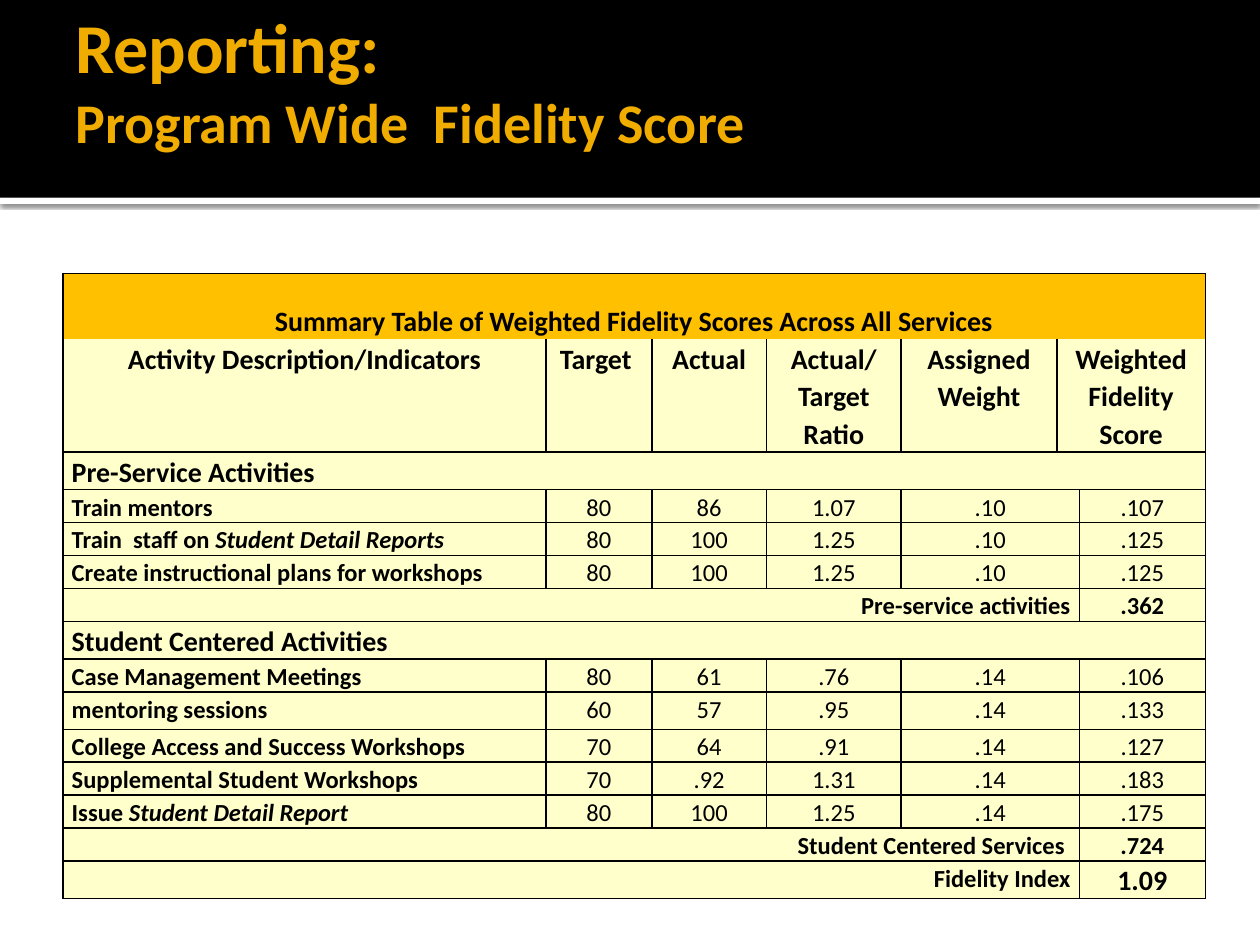
from lxml import etree
from pptx import Presentation
from pptx.dml.color import RGBColor
from pptx.enum.shapes import MSO_SHAPE
from pptx.enum.text import MSO_ANCHOR, PP_ALIGN
from pptx.util import Pt

RECT = MSO_SHAPE.RECTANGLE
MIDDLE = MSO_ANCHOR.MIDDLE
LEFT, CENTER, RIGHT, JUST = PP_ALIGN.LEFT, PP_ALIGN.CENTER, PP_ALIGN.RIGHT, PP_ALIGN.JUSTIFY
NS = "http://schemas.openxmlformats.org/drawingml/2006/main"
THEME = {
    "font": "Calibri", "black": "000000", "white": "FFFFFF", "gold": "F0AD00",
    "amber": "FFC000", "cream": "FFFFCC", "title": 40, "sub": 32, "head": 16, "body": 14,
}


def write(par, text, size, color="black", bold=True, align=LEFT):
    par.alignment = align
    for i, part in enumerate(text.split("*")):
        run = par.add_run()
        run.text = part
        look = {"name": THEME["font"], "size": Pt(size), "bold": bold, "italic": i % 2 == 1}
        for key, val in look.items():
            setattr(run.font, key, val)
        run.font.color.rgb = RGBColor.from_string(THEME[color])


def put(row, col, text, size, bold, align, span=1, fill="cream", sides="LRTB", top=0):
    cell = table.cell(row, col)
    if span > 1:
        cell.merge(table.cell(row, col + span - 1))
    margins = {"margin_left": Pt(5), "margin_right": Pt(5), "margin_top": Pt(top), "margin_bottom": 0}
    for key, val in margins.items():
        setattr(cell, key, val)
    cell.fill.solid()
    cell.fill.fore_color.rgb = RGBColor.from_string(THEME[fill])
    for i, line in enumerate(text.split("\n")):
        par = cell.text_frame.add_paragraph() if i else cell.text_frame.paragraphs[0]
        par.line_spacing = 1.1
        write(par, line, size, "black", bold, align)
    props = cell._tc.get_or_add_tcPr()
    for i, side in enumerate("LRTB"):
        paint = f'<a:solidFill><a:srgbClr val="{THEME["black"]}"/></a:solidFill>'
        if side not in sides:
            paint = "<a:noFill/>"
        props.insert(i, etree.fromstring(f'<a:ln{side} xmlns:a="{NS}" w="{Pt(1)}">{paint}</a:ln{side}>'))


prs = Presentation()
prs.slide_width, prs.slide_height = Pt(720), Pt(540)
slide = prs.slides.add_slide(prs.slide_layouts[6])

for name, top, high in (("white", 113, 3.6), ("black", 0, 113)):
    band = slide.shapes.add_shape(RECT, 0, Pt(top), Pt(720), Pt(high))
    band.shadow.inherit = False
    band.fill.solid()
    band.fill.fore_color.rgb = RGBColor.from_string(THEME[name])
    band.line.fill.background()
    if name == "white":
        shade = etree.fromstring(
            f'<a:outerShdw xmlns:a="{NS}" blurRad="{Pt(2.5)}" dist="{Pt(0.8)}" dir="5400000">'
            f'<a:srgbClr val="{THEME["black"]}"><a:alpha val="60000"/></a:srgbClr></a:outerShdw>')
        band._element.spPr.find(f"{{{NS}}}effectLst").append(shade)

DATA = [
    ("title", "Summary Table of Weighted Fidelity Scores Across All Services"),
    ("head", "Activity Description/Indicators", "Target ", "Actual", "Actual/\nTarget Ratio",
     "Assigned Weight", "Weighted Fidelity Score"),
    ("part", "Pre-Service Activities"),
    ("item", "Train mentors", "80", "86", "1.07", ".10", ".107"),
    ("item", "Train  staff on *Student Detail Reports", "80", "100", "1.25", ".10", ".125"),
    ("item", "Create instructional plans for workshops", "80", "100", "1.25", ".10", ".125"),
    ("sum", "Pre-service activities", ".362"),
    ("part", "Student Centered Activities"),
    ("item", "Case Management Meetings", "80", "61", ".76", ".14", ".106"),
    ("item", "mentoring sessions", "60", "57", ".95", ".14", ".133"),
    ("item", "College Access and Success Workshops", "70", "64", ".91", ".14", ".127"),
    ("item", "Supplemental Student Workshops", "70", ".92", "1.31", ".14", ".183"),
    ("item", "Issue *Student Detail Report", "80", "100", "1.25", ".14", ".175"),
    ("sum", "Student Centered Services ", ".724"),
    ("sum", "Fidelity Index", "1.09"),
]
WIDE = [276, 60.5, 65.5, 77, 89, 7.2, 72]
HIGH = {"title": 37.5, "head": 64.5, "part": 21.4, "item": 18.8, "sum": 18.8}

frame = slide.shapes.add_table(len(DATA), len(WIDE), Pt(36), Pt(156.2), Pt(648), Pt(352))
table = frame.table
table.first_row = table.horz_banding = False
for col, wide in zip(table.columns, WIDE):
    col.width = Pt(wide)

HEAD, BODY = THEME["head"], THEME["body"]
for row, (kind, *vals) in enumerate(DATA):
    table.rows[row].height = Pt(HIGH[kind])
    if kind == "title":
        put(row, 0, vals[0], HEAD, True, CENTER, 7, "amber", "LRT", 16)
    elif kind == "part":
        put(row, 0, vals[0], HEAD, True, JUST, 7)
    elif kind == "sum":
        last = row == len(DATA) - 1
        put(row, 0, vals[0], BODY, True, RIGHT, 6)
        put(row, 6, vals[1], HEAD if last else BODY, True, CENTER)
    elif kind == "head":
        for col, val in enumerate(vals):
            put(row, col, val, HEAD, True, CENTER, 2 if col == 5 else 1, sides="LRB")
    else:
        for col, val in enumerate(vals):
            put(row, col + (col == 5), val, BODY, col == 0, CENTER if col else JUST, 2 if col == 4 else 1)
table.rows[9].height = Pt(21.4)

box = slide.shapes.add_textbox(Pt(36), Pt(12.2), Pt(648), Pt(98.6)).text_frame
form = {"word_wrap": True, "vertical_anchor": MIDDLE, "margin_left": Pt(7.2),
        "margin_right": Pt(3.6), "margin_top": Pt(3.6), "margin_bottom": Pt(36)}
for key, val in form.items():
    setattr(box, key, val)
write(box.paragraphs[0], "Reporting:", THEME["title"], "gold")
write(box.add_paragraph(), "Program Wide  Fidelity Score", THEME["sub"], "gold")

prs.save("out.pptx")
